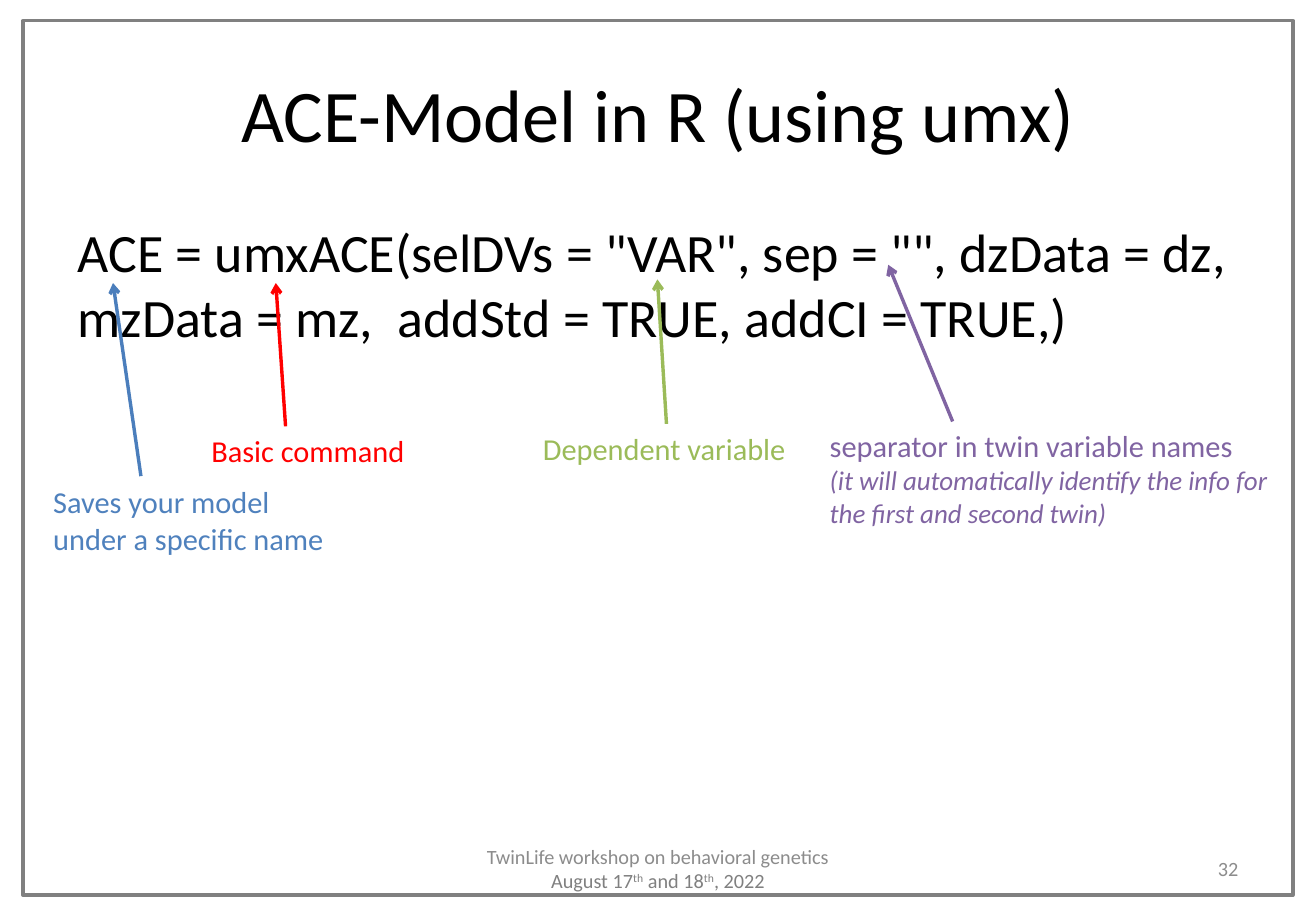
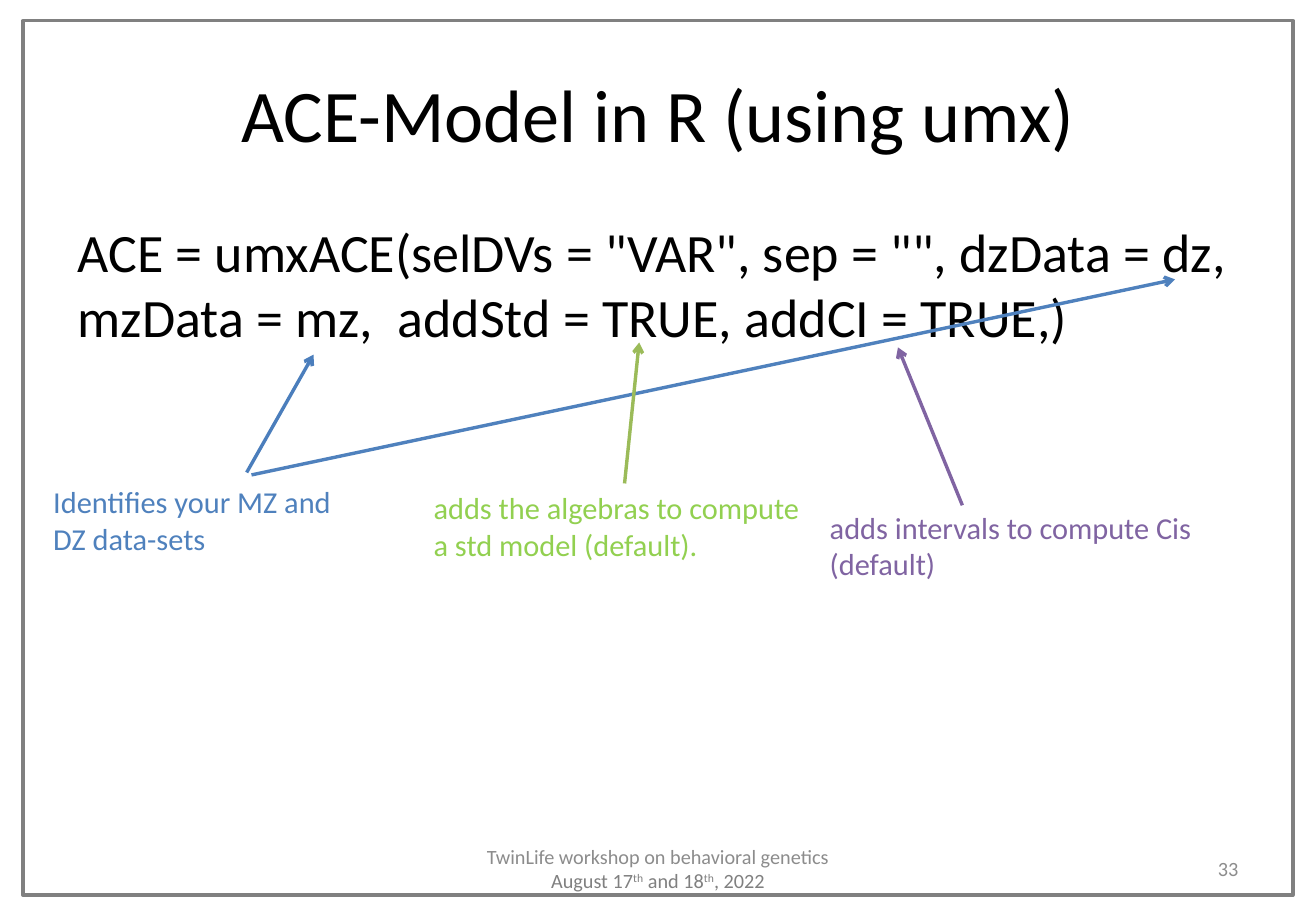
"""Build two slides that annotate the umxACE call of an ACE model in R."""
from lxml.etree import SubElement
from pptx import Presentation
from pptx.dml.color import RGBColor
from pptx.enum.shapes import MSO_CONNECTOR, MSO_SHAPE
from pptx.enum.text import MSO_ANCHOR, MSO_AUTO_SIZE, PP_ALIGN
from pptx.oxml.ns import qn
from pptx.util import Pt

PX = 9144
FONT = "Calibri"
BLACK = RGBColor(0x00, 0x00, 0x00)
GREY = RGBColor(0x80, 0x80, 0x80)
LIGHT_GREY = RGBColor(0x8C, 0x8C, 0x8C)
RED = RGBColor(0xFF, 0x00, 0x00)
BLUE = RGBColor(0x4F, 0x81, 0xBD)
DARK_BLUE = RGBColor(0x4B, 0x7E, 0xBC)
OLIVE = RGBColor(0x9B, 0xBB, 0x59)
LIME = RGBColor(0x92, 0xD0, 0x50)
PURPLE = RGBColor(0x80, 0x64, 0xA2)

TITLE = "ACE-Model in R (using umx)"
CODE = 'ACE = umxACE(selDVs = "VAR", sep = "", dzData = dz, mzData = mz,  addStd = TRUE, addCI = TRUE,)'
VENUE = "TwinLife workshop on behavioral genetics "
DATE = [("August 17", False), ("th", True), (" and 18", False), ("th", True), (", 2022", False)]

LABELS = [
    [
        ((164, 351, 181, 40), "Basic command", "", RED, False),
        ((34, 393, 260, 71), "Saves your model under a specific name", "", BLUE, True),
        ((437, 349, 223, 40), "Dependent variable", "", OLIVE, False),
        ((673, 347, 381, 94), "separator in twin variable names",
         "(it will automatically identify the info for the first and second twin)", PURPLE, True),
    ],
    [
        ((347, 398, 334, 71), "adds the algebras to compute a std model (default).", "", LIME, True),
        ((34, 393, 260, 71), "Identifies your MZ and DZ data-sets", "", BLUE, True),
        ((673, 414, 342, 71), "adds intervals to compute Cis (default)", "", PURPLE, True),
    ],
]
ARROWS = [
    [
        ((235, 351), (227, 233), RED, None),
        ((116, 392), (93, 233), DARK_BLUE, None),
        ((549, 349), (541, 230), OLIVE, 2),
        ((784, 347), (731, 218), PURPLE, None),
    ],
    [
        ((207, 391), (967, 230), BLUE, None),
        ((203, 389), (258, 292), DARK_BLUE, None),
        ((513, 397), (526, 282), OLIVE, 0),
        ((792, 416), (739, 286), PURPLE, None),
    ],
]


def add_text(slide, box, align=PP_ALIGN.LEFT, anchor=MSO_ANCHOR.TOP, wrap=True):
    """Add a text box and return it."""
    holder = slide.shapes.add_textbox(*[length * PX for length in box])
    holder.text_frame.word_wrap = wrap
    holder.text_frame.vertical_anchor = anchor
    holder.text_frame.paragraphs[0].alignment = align
    return holder


def add_run(holder, text, size, color):
    """Append a run to the first paragraph of a box and return it."""
    run = holder.text_frame.paragraphs[0].add_run()
    run.text = text
    run.font.name = FONT
    run.font.size = Pt(size)
    run.font.color.rgb = color
    return run


deck = Presentation()
deck.slide_width, deck.slide_height = 1083 * PX, 750 * PX

for number, (labels, arrows) in enumerate(zip(LABELS, ARROWS), start=32):
    slide = deck.slides.add_slide(deck.slide_layouts[6])

    frame = slide.shapes.add_shape(MSO_SHAPE.RECTANGLE, 19 * PX, 17 * PX, 1045 * PX, 720 * PX)
    frame.shadow.inherit = False
    frame.fill.background()
    frame.line.color.rgb = GREY
    frame.line.width = Pt(2)

    title = add_text(slide, (54, 30, 975, 125), PP_ALIGN.CENTER, MSO_ANCHOR.MIDDLE)
    add_run(title, TITLE, 44, BLACK)
    code = add_text(slide, (54, 175, 975, 495))
    add_run(code, CODE, 32, BLACK)
    page = add_text(slide, (776, 695, 253, 40), PP_ALIGN.RIGHT, MSO_ANCHOR.MIDDLE)
    add_run(page, str(number), 12, LIGHT_GREY)

    notes = []
    for box, text, detail, color, wrap in labels:
        note = add_text(slide, box, wrap=wrap)
        note.text_frame.auto_size = MSO_AUTO_SIZE.SHAPE_TO_FIT_TEXT
        add_run(note, text, 18, color)
        if detail:
            note.text_frame.paragraphs[0].add_line_break()
            add_run(note, detail, 16, color).font.italic = True
        notes.append(note)

    for start, end, color, joined in arrows:
        arrow = slide.shapes.add_connector(
            MSO_CONNECTOR.STRAIGHT, *[length * PX for length in start + end])
        if joined is not None:
            arrow.begin_connect(notes[joined], 0)
        arrow.line.color.rgb = color
        arrow.line.width = Pt(2)
        SubElement(arrow.line._get_or_add_ln(), qn("a:tailEnd"), type="arrow")
        SubElement(arrow._element.spPr, qn("a:effectLst"))

    footer = add_text(slide, (370, 695, 343, 40), PP_ALIGN.CENTER, MSO_ANCHOR.MIDDLE)
    add_run(footer, VENUE, 12, LIGHT_GREY)
    for text, raised in DATE:
        run = add_run(footer, text, 12, GREY)
        if raised:
            run.font._element.set("baseline", "30000")

deck.save("out.pptx")
